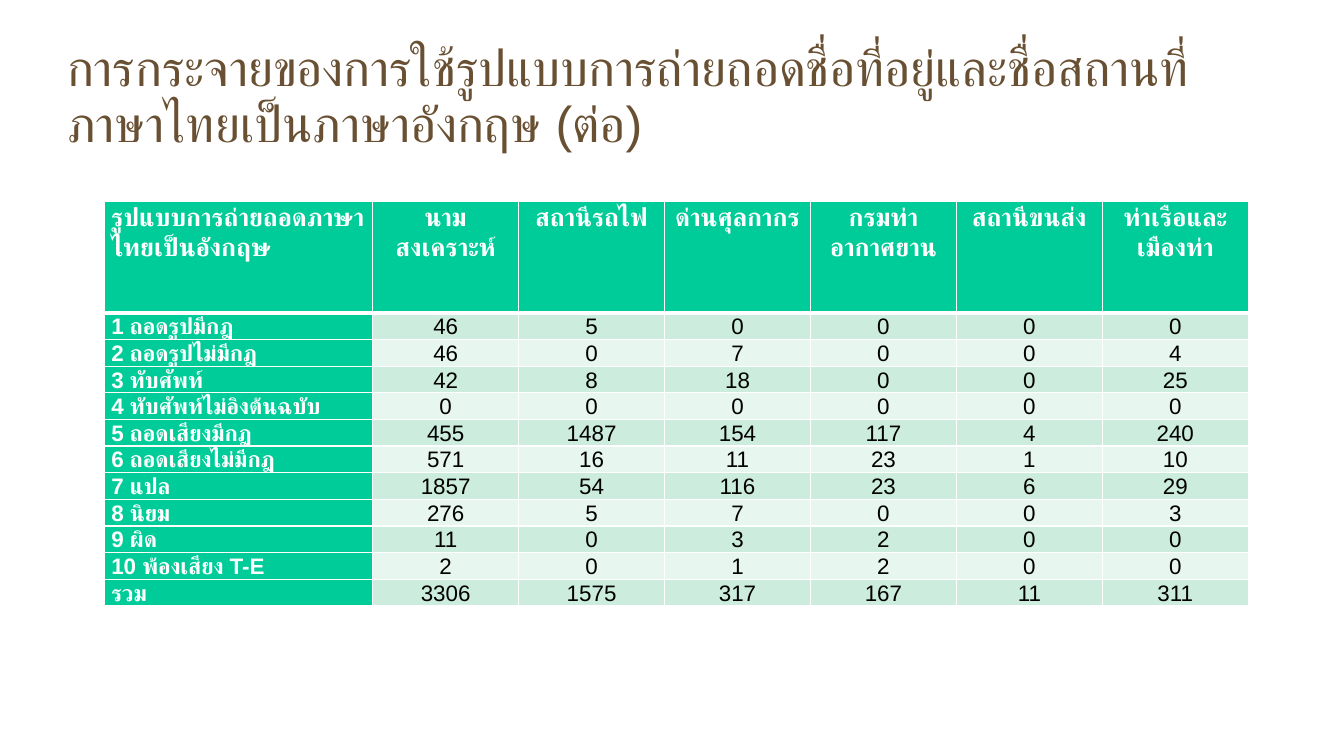
"""Builds a slide with a table of Thai-to-English transliteration patterns."""
from dataclasses import dataclass

from lxml.etree import SubElement
from pptx import Presentation
from pptx.dml.color import RGBColor
from pptx.enum.lang import MSO_LANGUAGE_ID as Language
from pptx.enum.text import MSO_ANCHOR as Anchor, MSO_AUTO_SIZE as AutoSize, PP_ALIGN as Align
from pptx.oxml.ns import qn
from pptx.util import Pt

EMU_PER_PX = 9525

TITLE = "การกระจายของการใช้รูปแบบการถ่ายถอดชื่อที่อยู่และชื่อสถานที่ภาษาไทยเป็นภาษาอังกฤษ (ต่อ)"
ROWS = [
    ("รูปแบบการถ่ายถอดภาษาไทยเป็นอังกฤษ", "นาม\nสงเคราะห์", "สถานีรถไฟ", "ด่านศุลกากร",
     "กรมท่าอากาศยาน", "สถานีขนส่ง", "ท่าเรือและเมืองท่า"),
    ("1 ถอดรูปมีกฎ", 46, 5, 0, 0, 0, 0),
    ("2 ถอดรูปไม่มีกฎ", 46, 0, 7, 0, 0, 4),
    ("3 ทับศัพท์", 42, 8, 18, 0, 0, 25),
    ("4 ทับศัพท์ไม่อิงต้นฉบับ", 0, 0, 0, 0, 0, 0),
    ("5 ถอดเสียงมีกฎ", 455, 1487, 154, 117, 4, 240),
    ("6 ถอดเสียงไม่มีกฎ", 571, 16, 11, 23, 1, 10),
    ("7 แปล", 1857, 54, 116, 23, 6, 29),
    ("8 นิยม", 276, 5, 7, 0, 0, 3),
    ("9 ผิด", 11, 0, 3, 2, 0, 0),
    ("10 พ้องเสียง T-E", 2, 0, 1, 2, 0, 0),
    ("รวม", 3306, 1575, 317, 167, 11, 311),
]
COLUMN_WIDTHS = [256] + [139] * 6
ROW_HEIGHTS = [106] + [23] * 11


@dataclass(frozen=True)
class Theme:
    font: str = "Arial"
    title_color: str = "695033"
    accent: str = "00CC99"
    bands: tuple = ("E7F6EF", "CCECDE")
    light: str = "FFFFFF"
    dark: str = "000000"
    title_size: int = 36
    header_size: int = 18
    body_size: int = 16
    thin: int = 1
    thick: int = 3


def px(length):
    return length * EMU_PER_PX


def apply(target, values):
    for name, value in values.items():
        setattr(target, name, value)


class SlideBuilder:
    def __init__(self, presentation, theme):
        self.theme = theme
        self.slide = presentation.slides.add_slide(presentation.slide_layouts[5])

    def text(self, frame, text, size, color, bold=False, align=Align.LEFT, spacing=1.0):
        frame.text = str(text)
        for paragraph in frame.paragraphs:
            apply(paragraph, {"alignment": align, "line_spacing": spacing})
            for run in paragraph.runs:
                apply(run.font, {"name": self.theme.font, "size": Pt(size), "bold": bold,
                                 "language_id": Language.THAI})
                run.font.color.rgb = RGBColor.from_string(color)
                SubElement(run._r.get_or_add_rPr(), qn("a:cs"), typeface=self.theme.font)

    def title(self, text, left, top, width, height):
        shape = self.slide.shapes.title
        apply(shape, {"left": px(left), "top": px(top), "width": px(width), "height": px(height)})
        frame = shape.text_frame
        apply(frame, {"margin_left": 0, "margin_top": 0, "margin_right": 0, "margin_bottom": 0,
                      "word_wrap": True, "auto_size": AutoSize.NONE,
                      "vertical_anchor": Anchor.MIDDLE})
        self.text(frame, text, self.theme.title_size, self.theme.title_color, spacing=0.93)

    def borders(self, cell, row):
        properties = cell._tc.get_or_add_tcPr()
        thick_side = {0: "B", 1: "T"}.get(row)
        for side in "LRTB":
            points = self.theme.thick if side == thick_side else self.theme.thin
            line = SubElement(properties, qn(f"a:ln{side}"), w=str(Pt(points)))
            fill = SubElement(line, qn("a:solidFill"))
            SubElement(fill, qn("a:srgbClr"), val=self.theme.light)

    def cell(self, cell, text, row, column):
        theme = self.theme
        heading = row == 0 or column == 0
        top_aligned = row == 0 or column < 2
        side, top = (7, 0) if top_aligned else (1, 1)
        apply(cell, {"margin_left": px(side), "margin_right": px(side),
                     "margin_top": px(top), "margin_bottom": 0,
                     "vertical_anchor": Anchor.TOP if top_aligned else Anchor.BOTTOM})
        self.borders(cell, row)
        cell.fill.solid()
        cell.fill.fore_color.rgb = RGBColor.from_string(
            theme.accent if heading else theme.bands[row % 2])
        self.text(cell.text_frame, text,
                  theme.body_size if row else theme.header_size,
                  theme.light if heading else theme.dark, heading,
                  Align.CENTER if column else Align.LEFT,
                  1.07 if top_aligned else 1.0)

    def table(self, rows, left, top, widths, heights):
        table = self.slide.shapes.add_table(
            len(rows), len(widths), px(left), px(top), px(sum(widths)), px(sum(heights))).table
        apply(table, {"first_row": False, "horz_banding": False})
        for column, width in zip(table.columns, widths):
            column.width = px(width)
        for row, height in zip(table.rows, heights):
            row.height = px(height)
        for row, values in enumerate(rows):
            for column, text in enumerate(values):
                self.cell(table.cell(row, column), text, row, column)


def main():
    presentation = Presentation()
    apply(presentation, {"slide_width": px(1280), "slide_height": px(720)})
    builder = SlideBuilder(presentation, Theme())
    builder.table(ROWS, 99, 192, COLUMN_WIDTHS, ROW_HEIGHTS)
    builder.title(TITLE, 64, 33, 1128, 120)
    presentation.save("out.pptx")


if __name__ == "__main__":
    main()
